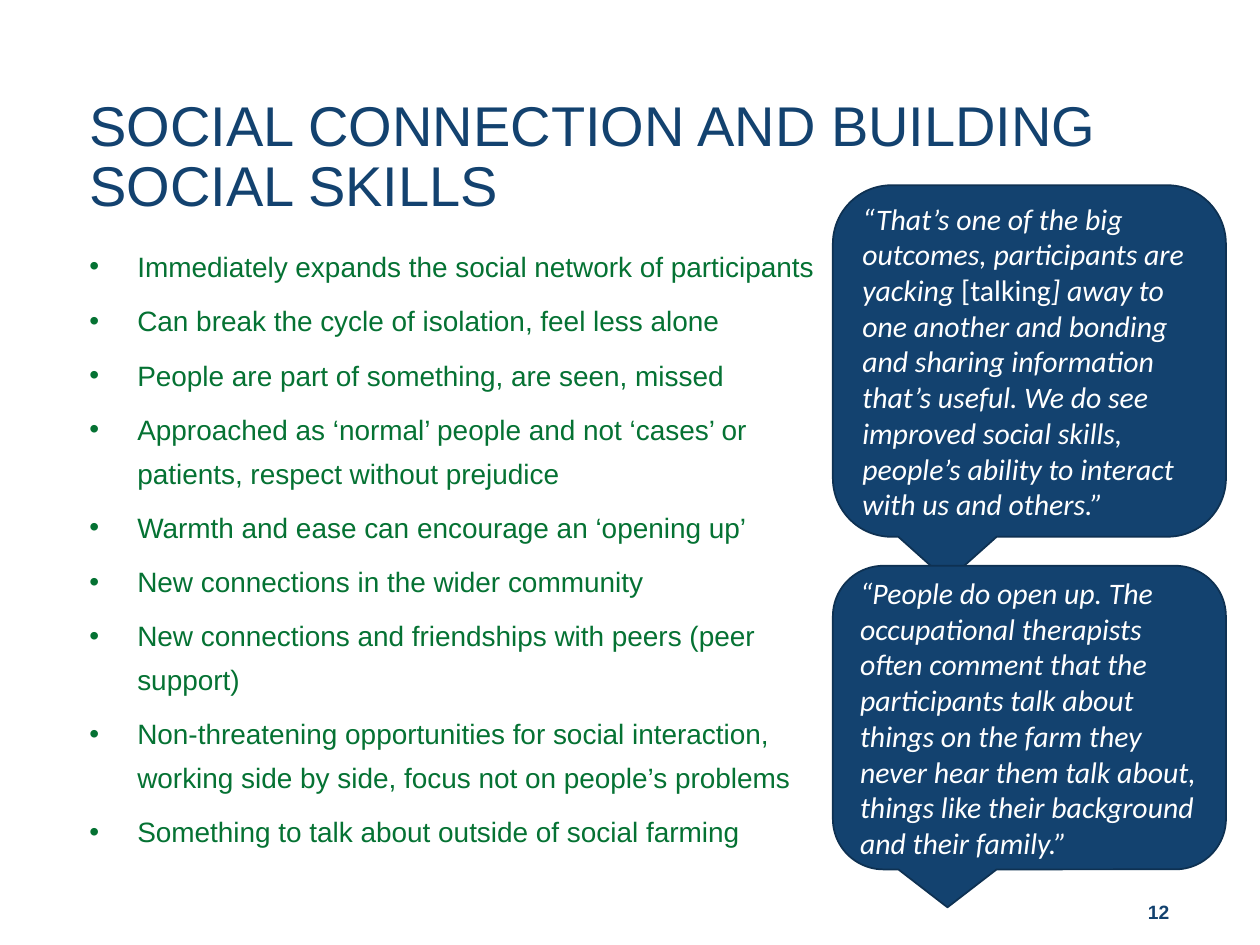
from pptx import Presentation
from pptx.dml.color import RGBColor
from pptx.enum.shapes import MSO_SHAPE
from pptx.enum.text import MSO_ANCHOR, MSO_AUTO_SIZE, PP_ALIGN
from pptx.oxml.ns import qn
from pptx.util import Inches, Pt
from lxml.etree import SubElement

NAVY = RGBColor(0x13, 0x42, 0x6F)
NAVY_EDGE = RGBColor(0x0E, 0x31, 0x52)
GREEN = RGBColor(0x05, 0x72, 0x33)
WHITE = RGBColor(0xFF, 0xFF, 0xFF)

SLIDE_WIDTH, SLIDE_HEIGHT = Inches(10), Inches(7.5)
LEFT_MARGIN = 0.71
CALLOUT_LEFT, CALLOUT_WIDTH = 6.61, 3.12
BODY_TOP = 1.85
TITLE_TOP = 0.73

TITLE = "SOCIAL CONNECTION AND BUILDING SOCIAL SKILLS"
BENEFITS = [
    "Immediately expands the social network of participants",
    "Can break the cycle of isolation, feel less alone",
    "People are part of something, are seen, missed",
    "Approached as ‘normal’ people and not ‘cases’ or patients, respect without prejudice",
    "Warmth and ease can encourage an ‘opening up’",
    "New connections in the wider community",
    "New connections and friendships with peers (peer support)",
    "Non-threatening opportunities for social interaction, working side by side, "
    "focus not on people’s problems",
    "Something to talk about outside of social farming",
]
OUTCOMES_QUOTE = [
    ("“That’s one of the big outcomes, participants are yacking ", True),
    ("[talking", False),
    ("] away to one another and bonding and sharing information that’s useful. "
     "We do see improved social skills, people’s ability to interact with us and others.”", True),
]
OPENING_UP_QUOTE = [
    ("“People do open up. The occupational therapists often comment that the participants "
     "talk about things on the farm they never hear them talk about, things like their "
     "background and their family.”", True),
]


def place(shape, box):
    shape.left, shape.top, shape.width, shape.height = (Inches(length) for length in box)


def set_frame(frame, anchor=MSO_ANCHOR.TOP, margins=(0.1, 0.05, 0.1, 0.05)):
    frame.word_wrap = True
    frame.auto_size = MSO_AUTO_SIZE.NONE
    frame.vertical_anchor = anchor
    (frame.margin_left, frame.margin_top,
     frame.margin_right, frame.margin_bottom) = (Inches(margin) for margin in margins)


def add_text(paragraph, text, size, color, font="Arial", bold=False, italic=False,
             align=PP_ALIGN.LEFT, line_spacing=None, space_before=0):
    paragraph.alignment = align
    paragraph.space_before = Pt(space_before)
    if line_spacing:
        paragraph.line_spacing = Pt(line_spacing)
    run = paragraph.add_run()
    run.text = text
    run.font.name, run.font.size = font, Pt(size)
    run.font.bold, run.font.italic = bold, italic
    run.font.color.rgb = color


def add_bullet(paragraph, indent):
    properties = paragraph._p.get_or_add_pPr()
    properties.set("marL", str(Inches(indent)))
    properties.set("indent", str(-Inches(indent)))
    SubElement(properties, qn("a:buFont")).set("typeface", "Arial")
    SubElement(properties, qn("a:buChar")).set("char", "•")


def fill_title(shape, box):
    place(shape, box)
    set_frame(shape.text_frame, margins=(0, 0.05, 0.1, 0.05))
    add_text(shape.text_frame.paragraphs[0], TITLE, 32, NAVY, line_spacing=34)


def fill_benefits(shape, box):
    place(shape, box)
    frame = shape.text_frame
    set_frame(frame, margins=(0, 0.05, 0.1, 0.05))
    for index, benefit in enumerate(BENEFITS):
        paragraph = frame.add_paragraph() if index else frame.paragraphs[0]
        add_bullet(paragraph, 0.38)
        add_text(paragraph, benefit, 16, GREEN, line_spacing=25,
                 space_before=6 if index else 0)


def add_page_number(slide, box, number):
    shape = slide.shapes.add_textbox(*(Inches(length) for length in box))
    set_frame(shape.text_frame, MSO_ANCHOR.BOTTOM, (0, 0.05, 0.71, 0.16))
    add_text(shape.text_frame.paragraphs[0], number, 11, NAVY, bold=True,
             align=PP_ALIGN.RIGHT, line_spacing=13.3)


def add_quote(slide, box, parts):
    shape = slide.shapes.add_shape(MSO_SHAPE.ROUNDED_RECTANGULAR_CALLOUT,
                                   *(Inches(length) for length in box))
    shape.shadow.inherit = False
    shape.fill.solid()
    shape.fill.fore_color.rgb = NAVY
    shape.line.color.rgb = NAVY_EDGE
    shape.line.width = Pt(1)
    set_frame(shape.text_frame, MSO_ANCHOR.MIDDLE)
    for text, italic in parts:
        add_text(shape.text_frame.paragraphs[0], text, 17, WHITE, font="Calibri", italic=italic)


def build_slide(presentation):
    slide = presentation.slides.add_slide(presentation.slide_layouts[1])
    title, body = slide.placeholders
    fill_title(title, (LEFT_MARGIN, TITLE_TOP, 8.57, BODY_TOP - TITLE_TOP))
    fill_benefits(body, (LEFT_MARGIN, BODY_TOP, CALLOUT_LEFT - LEFT_MARGIN, 4.18))
    add_page_number(slide, (7.74, 6.89, 2.25, 0.6), "12")
    add_quote(slide, (CALLOUT_LEFT, 1.47, CALLOUT_WIDTH, 2.79), OUTCOMES_QUOTE)
    add_quote(slide, (CALLOUT_LEFT, 4.49, CALLOUT_WIDTH, 2.41), OPENING_UP_QUOTE)


def main():
    presentation = Presentation()
    presentation.slide_width, presentation.slide_height = SLIDE_WIDTH, SLIDE_HEIGHT
    build_slide(presentation)
    presentation.save("out.pptx")


if __name__ == "__main__":
    main()
